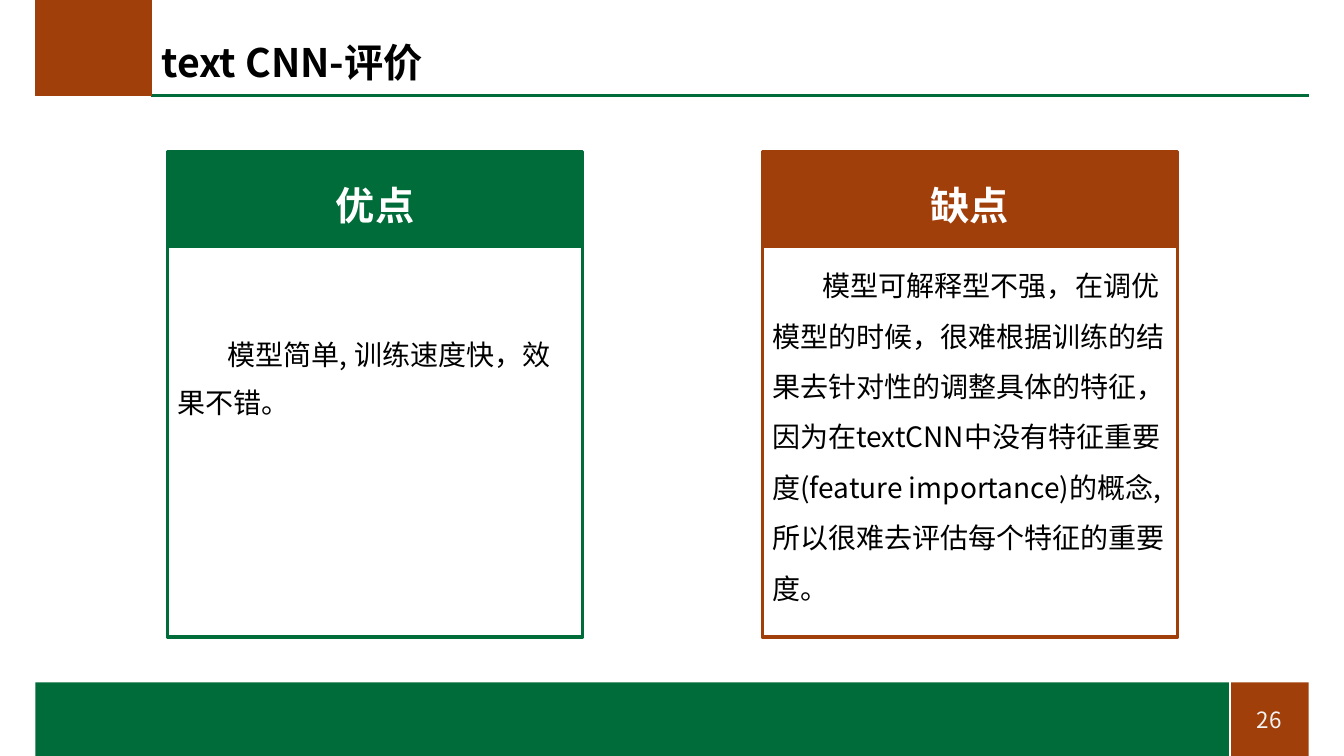
from lxml.etree import SubElement
from pptx import Presentation
from pptx.dml.color import RGBColor
from pptx.enum.shapes import MSO_CONNECTOR as Connector, MSO_SHAPE as Shape
from pptx.enum.text import MSO_ANCHOR as Anchor, MSO_AUTO_SIZE as AutoSize, PP_ALIGN as Align
from pptx.oxml.ns import qn
from pptx.util import Inches, Pt

GREEN = RGBColor(0x00, 0x6C, 0x39)
RUST = RGBColor(0xA1, 0x3F, 0x0B)
WHITE = RGBColor(0xFF, 0xFF, 0xFF)
PALE = RGBColor(0xF2, 0xF2, 0xF2)
BLACK = RGBColor(0, 0, 0)
CJK_FONT = "Noto Sans CJK SC"
WIDTH, HEIGHT = 13.33, 7.5
LEFT, RIGHT = 0.35, 12.98
HEADER_HEIGHT = 0.95
FOOTER_TOP = 6.77
PAGE_LEFT = 12.2
CARD_LEFT, CARD_TOP = 1.66, 1.5
CARD_WIDTH, CARD_HEIGHT, CARD_PITCH = 4.12, 4.82, 5.9
CARDS = [
    ("优点", GREEN, "模型简单, 训练速度快，效果不错。", 1.4, 0.77),
    ("缺点", RUST,
     "模型可解释型不强，在调优模型的时候，很难根据训练的结果去针对性的调整具体的特征，"
     "因为在textCNN中没有特征重要度(feature importance)的概念, "
     "所以很难去评估每个特征的重要度。", 1.5, 0.05),
]


def add_box(slide, box, fill, line=None, weight=1):
    shape = slide.shapes.add_shape(Shape.RECTANGLE, *map(Inches, box))
    shape.shadow.inherit = False
    shape.fill.solid()
    shape.fill.fore_color.rgb = fill
    if line is None:
        shape.line.fill.background()
    else:
        shape.line.color.rgb = line
        shape.line.width = Pt(weight)
    return shape


def add_line(slide, start, end, color, weight):
    line = slide.shapes.add_connector(Connector.STRAIGHT, *map(Inches, start + end))
    line.line.color.rgb = color
    line.line.width = Pt(weight)
    SubElement(line._element.spPr, qn("a:effectLst"))


def write(shape, text, size, color, align, anchor, spacing=1.0, bold=False,
          latin=CJK_FONT, indent=0):
    frame = shape.text_frame
    frame.word_wrap = True
    frame.vertical_anchor = anchor
    paragraph = frame.paragraphs[0]
    paragraph.alignment = align
    paragraph.line_spacing = spacing
    if indent:
        properties = paragraph._p.get_or_add_pPr()
        properties.set("marL", "0")
        properties.set("indent", str(Inches(indent)))
    run = paragraph.add_run()
    run.text = text
    run.font.size = Pt(size)
    run.font.bold = bold
    run.font.color.rgb = color
    run.font.name = latin
    SubElement(run._r.get_or_add_rPr(), qn("a:ea"), typeface=CJK_FONT)


def add_header(slide, text):
    block_width = 1.15
    line_left = LEFT + block_width
    add_line(slide, (line_left, HEADER_HEIGHT), (RIGHT, HEADER_HEIGHT), GREEN, 2.25)
    add_box(slide, (LEFT, 0, block_width, HEADER_HEIGHT), RUST, RUST)
    title = slide.shapes.title
    title.left, title.top = Inches(line_left), Inches(0.38)
    title.width, title.height = Inches(9.45), Inches(0.52)
    title.text_frame.auto_size = AutoSize.NONE
    write(title, text, 28, BLACK, Align.LEFT, Anchor.MIDDLE, 0.9, True)


def add_footer(slide, number):
    height = HEIGHT - FOOTER_TOP
    add_box(slide, (LEFT, FOOTER_TOP, PAGE_LEFT - LEFT, height), GREEN)
    page = add_box(slide, (PAGE_LEFT, FOOTER_TOP, RIGHT - PAGE_LEFT, height), RUST)
    write(page, number, 16, PALE, Align.CENTER, Anchor.MIDDLE)
    add_line(slide, (PAGE_LEFT, FOOTER_TOP), (PAGE_LEFT, HEIGHT), WHITE, 1)


def add_card(slide, box, heading, color, text, spacing, top_inset):
    left, top, width, height = box
    body_top = top + HEADER_HEIGHT
    body = add_box(slide, (left, body_top, width, height - HEADER_HEIGHT), WHITE, color, 2.25)
    body.text_frame.margin_top = Inches(top_inset)
    write(body, text, 20, BLACK, Align.LEFT, Anchor.TOP, spacing, indent=0.5)
    head = add_box(slide, (left, top, width, HEADER_HEIGHT), color, color, 2.25)
    write(head, heading, 28, WHITE, Align.CENTER, Anchor.MIDDLE, 1.25, True, "Arial")


def main():
    presentation = Presentation()
    presentation.slide_width = Inches(WIDTH)
    presentation.slide_height = Inches(HEIGHT)
    slide = presentation.slides.add_slide(presentation.slide_layouts[5])
    add_header(slide, "text CNN-评价")
    add_footer(slide, "26")
    for column, card in enumerate(CARDS):
        left = CARD_LEFT + column * CARD_PITCH
        add_card(slide, (left, CARD_TOP, CARD_WIDTH, CARD_HEIGHT), *card)
    presentation.save("out.pptx")


if __name__ == "__main__":
    main()
